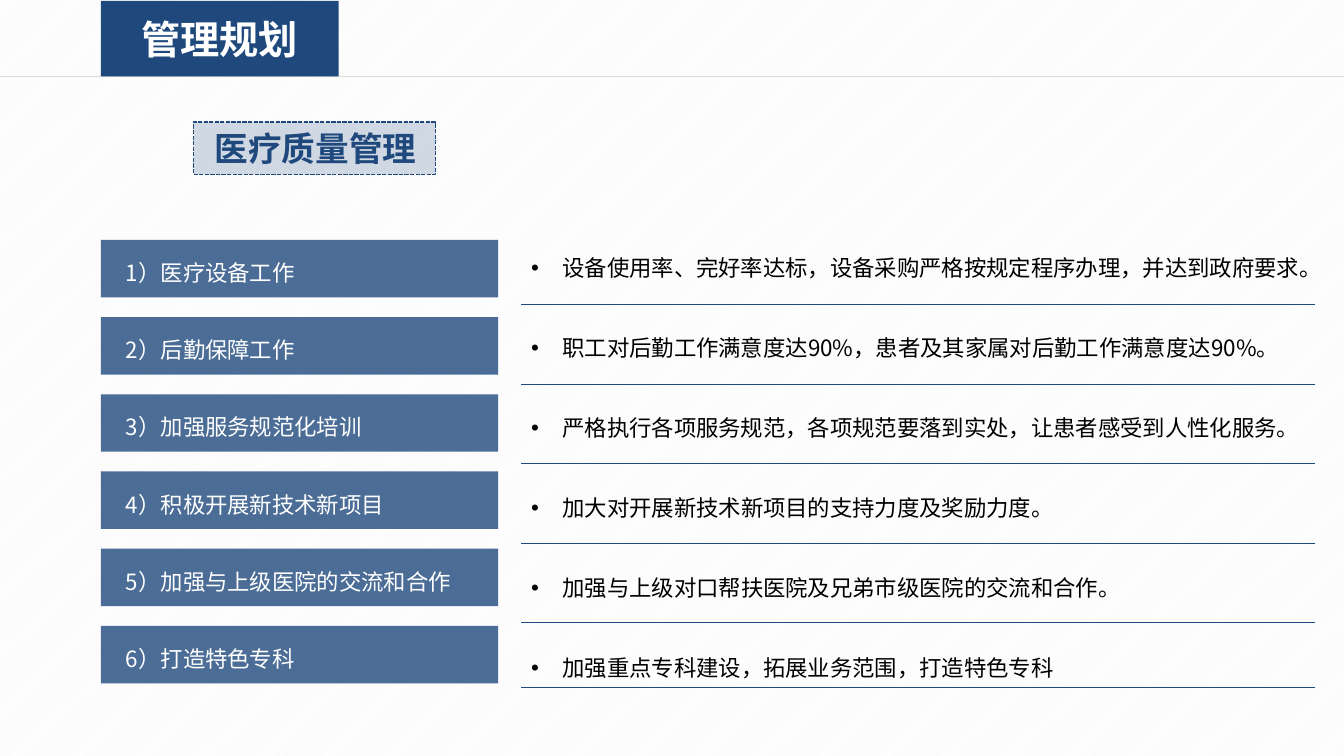
"""Build the hospital management plan slide on medical quality."""
from typing import Any, NamedTuple

from lxml import etree
from pptx import Presentation
from pptx.dml.color import RGBColor
from pptx.enum.dml import MSO_LINE, MSO_PATTERN
from pptx.enum.shapes import MSO_CONNECTOR, MSO_SHAPE
from pptx.enum.text import MSO_ANCHOR, MSO_AUTO_SIZE, PP_ALIGN
from pptx.oxml.ns import qn
from pptx.util import Inches, Pt

RECTANGLE = MSO_SHAPE.RECTANGLE
STRAIGHT = MSO_CONNECTOR.STRAIGHT
UPWARD_STRIPES = MSO_PATTERN.DARK_UPWARD_DIAGONAL
SQUARE_DASH = MSO_LINE.SQUARE_DOT
TOP, MIDDLE = MSO_ANCHOR.TOP, MSO_ANCHOR.MIDDLE
LEFT, CENTER = PP_ALIGN.LEFT, PP_ALIGN.CENTER
NO_FIT, GROW = MSO_AUTO_SIZE.NONE, MSO_AUTO_SIZE.SHAPE_TO_FIT_TEXT

FONT = "Noto Sans CJK SC"
COLORS = {
    "navy": "1F497D",
    "white": "FFFFFF",
    "black": "000000",
    "stripe": "F2F2F2",
    "rule": "BFBFBF",
}


class Box(NamedTuple):
    """Position and size in inches."""

    left: float
    top: float
    width: float
    height: float


class TextStyle(NamedTuple):
    """Formats of a text frame, its paragraph and its font."""

    color: str
    frame: dict[str, Any]
    paragraph: dict[str, Any]
    font: dict[str, Any]


class Measure(NamedTuple):
    """One row of the plan: task label, goal, goal width and divider height."""

    label: str
    goal: str
    goal_width: float
    divider: float


MEASURES = [
    Measure("1）医疗设备工作", "设备使用率、完好率达标，设备采购严格按规定程序办理，并达到政府要求。", 8.16, 3.02),
    Measure("2）后勤保障工作", "职工对后勤工作满意度达90%，患者及其家属对后勤工作满意度达90%。", 7.87, 3.81),
    Measure("3）加强服务规范化培训", "严格执行各项服务规范，各项规范要落到实处，让患者感受到人性化服务。", 7.87, 4.6),
    Measure("4）积极开展新技术新项目", "加大对开展新技术新项目的支持力度及奖励力度。", 6.89, 5.39),
    Measure("5）加强与上级医院的交流和合作", "加强与上级对口帮扶医院及兄弟市级医院的交流和合作。", 6.89, 6.18),
    Measure("6）打造特色专科", "加强重点专科建设，拓展业务范围，打造特色专科", 6.89, 6.82),
]

MARGINS = {
    "margin_left": Inches(0.1),
    "margin_right": Inches(0.1),
    "margin_top": Inches(0.05),
    "margin_bottom": Inches(0.05),
    "word_wrap": True,
    "auto_size": NO_FIT,
    "vertical_anchor": MIDDLE,
}
TITLE_STYLE = TextStyle(
    "white", MARGINS, {"alignment": CENTER}, {"size": Pt(28), "bold": True}
)
TOPIC_STYLE = TextStyle(
    "navy",
    MARGINS | {"margin_left": Inches(0.21), "word_wrap": False},
    {"alignment": LEFT},
    {"size": Pt(24), "bold": True},
)
LABEL_STYLE = TextStyle(
    "white",
    MARGINS | {"margin_left": Inches(0.25)},
    {"alignment": LEFT, "line_spacing": 1.3},
    {"size": Pt(16)},
)
GOAL_STYLE = TextStyle(
    "black",
    MARGINS | {"auto_size": GROW, "vertical_anchor": TOP},
    {"alignment": LEFT, "line_spacing": 1.2},
    {"size": Pt(16)},
)


def rgb(name: str) -> RGBColor:
    """Return a named colour."""
    return RGBColor.from_string(COLORS[name])


def apply_formats(target: Any, formats: dict[str, Any]) -> None:
    """Set every format value on the target."""
    for name, value in formats.items():
        setattr(target, name, value)


def set_opacity(shape: Any, location: str, percent: int) -> None:
    """Make the solid colour at a location in the shape partly transparent."""
    for color in shape._element.spPr.xpath(f"{location}/a:srgbClr"):
        etree.SubElement(color, qn("a:alpha")).set("val", str(percent * 1000))


def write_text(shape: Any, text: str, style: TextStyle) -> Any:
    """Write one formatted paragraph and return it."""
    frame = shape.text_frame
    apply_formats(frame, style.frame)
    paragraph = frame.paragraphs[0]
    apply_formats(paragraph, style.paragraph)
    run = paragraph.add_run()
    run.text = text
    apply_formats(run.font, style.font | {"name": FONT})
    run.font.color.rgb = rgb(style.color)
    etree.SubElement(run._r.get_or_add_rPr(), qn("a:ea")).set("typeface", FONT)
    return paragraph


def add_panel(slide: Any, box: Box, text: str, style: TextStyle, opacity: int) -> Any:
    """Add a translucent navy rectangle with text."""
    shape = slide.shapes.add_shape(RECTANGLE, *map(Inches, box))
    shape.shadow.inherit = False
    shape.fill.solid()
    shape.fill.fore_color.rgb = rgb("navy")
    shape.line.fill.background()
    set_opacity(shape, "./a:solidFill", opacity)
    write_text(shape, text, style)
    return shape


def add_goal(slide: Any, box: Box, text: str) -> None:
    """Add a bulleted goal."""
    shape = slide.shapes.add_textbox(*map(Inches, box))
    paragraph = write_text(shape, text, GOAL_STYLE)
    properties = paragraph._p.get_or_add_pPr()
    properties.set("marL", str(Inches(0.31)))
    properties.set("indent", str(-Inches(0.31)))
    etree.SubElement(properties, qn("a:buFont")).set("typeface", "Arial")
    etree.SubElement(properties, qn("a:buChar")).set("char", "•")


def add_rule(slide: Any, left: float, right: float, top: float, color: str) -> Any:
    """Add a thin horizontal line."""
    rule = slide.shapes.add_connector(
        STRAIGHT, Inches(left), Inches(top), Inches(right), Inches(top)
    )
    rule.line.color.rgb = rgb(color)
    rule.line.width = Pt(0.75)
    etree.SubElement(rule._element.spPr, qn("a:effectLst"))
    return rule


def add_header(slide: Any) -> None:
    """Format the title, the line below it and the topic tag."""
    title = slide.shapes.title
    apply_formats(
        title, dict(zip(Box._fields, map(Inches, Box(1, 0.01, 2.36, 0.75))))
    )
    title.fill.solid()
    title.fill.fore_color.rgb = rgb("navy")
    write_text(title, "管理规划", TITLE_STYLE)
    header_rule = add_rule(slide, 0, 13.33, 0.76, "rule")
    set_opacity(header_rule, "./a:ln/a:solidFill", 50)
    topic = add_panel(slide, Box(1.92, 1.21, 2.4, 0.52), "医疗质量管理", TOPIC_STYLE, 20)
    topic.line.color.rgb = rgb("navy")
    apply_formats(topic.line, {"width": Pt(1), "dash_style": SQUARE_DASH})


def main() -> None:
    """Build and save the slide."""
    presentation = Presentation()
    apply_formats(
        presentation, {"slide_width": Inches(13.33), "slide_height": Inches(7.5)}
    )
    slide = presentation.slides.add_slide(presentation.slide_layouts[5])
    background = slide.background.fill
    background.patterned()
    background.pattern = UPWARD_STRIPES
    background.fore_color.rgb = rgb("stripe")
    background.back_color.rgb = rgb("white")
    add_header(slide)
    for row, measure in enumerate(MEASURES):
        label_box = Box(1, 2.38 + row * 3.83 / 5, 3.94, 0.57)
        goal_box = Box(5.17, 2.42 + row * 3.97 / 5, measure.goal_width, 0.42)
        add_panel(slide, label_box, measure.label, LABEL_STYLE, 80)
        add_goal(slide, goal_box, measure.goal)
        add_rule(slide, 5.17, 13.04, measure.divider, "navy")
    presentation.save("out.pptx")


if __name__ == "__main__":
    main()
